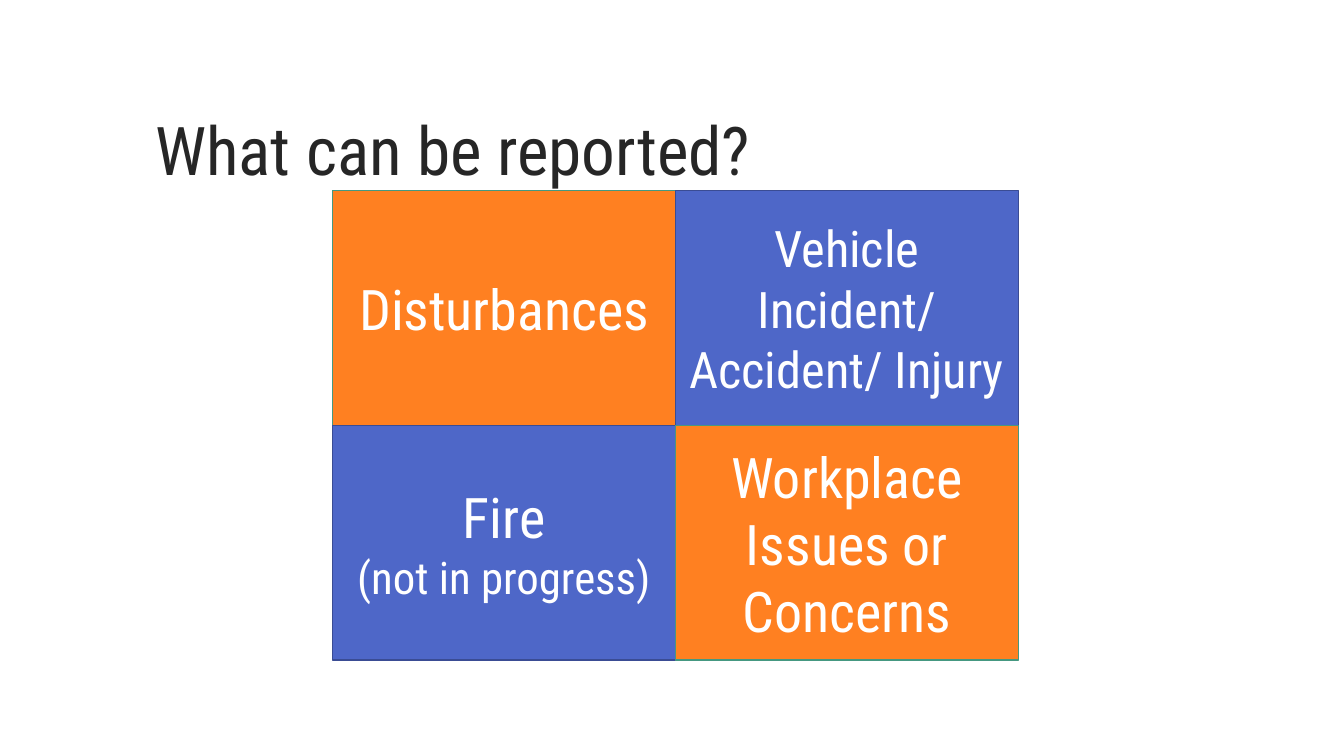
"""Build the "What can be reported?" slide with its grid of four report types."""
from pptx import Presentation
from pptx.dml.color import RGBColor
from pptx.enum.shapes import MSO_SHAPE
from pptx.enum.text import MSO_ANCHOR, PP_ALIGN
from pptx.util import Inches, Pt

TITLE = "What can be reported?"
REPORT_TYPES = [
    [
        ("orange", [("Disturbances", "large")]),
        ("blue", [("Vehicle Incident/ Accident/ Injury", "medium")]),
    ],
    [
        ("blue", [("Fire", "large"), ("(not in progress)", "small")]),
        ("orange", [("Workplace Issues or Concerns", "large")]),
    ],
]
THEME = {
    "font": "Roboto Condensed",
    "title_color": "262626",
    "tile_text": "FFFFFF",
    "tiles": {"orange": ("FF8021", "459881"), "blue": ("4E67C8", "3A4C94")},
    "sizes": {"title": 48, "large": 40, "medium": 36, "small": 32},
}
GRID_LEFT, GRID_TOP = 3.3, 1.89
TILE_WIDTH, TILE_HEIGHT = 3.4, 2.33


def add_text(paragraph, text, size, color):
    run = paragraph.add_run()
    run.text = text
    run.font.name = THEME["font"]
    run.font.size = Pt(THEME["sizes"][size])
    run.font.color.rgb = RGBColor.from_string(color)


def prepare_frame(shape):
    frame = shape.text_frame
    frame.word_wrap = True
    frame.vertical_anchor = MSO_ANCHOR.MIDDLE
    return frame


def add_title(slide):
    box = slide.shapes.add_textbox(Inches(1.44), Inches(0.8), Inches(10.52), Inches(1.45))
    paragraph = prepare_frame(box).paragraphs[0]
    paragraph.line_spacing = 0.9
    add_text(paragraph, TITLE, "title", THEME["title_color"])


def add_tile(slide, row, column, color, lines):
    shape = slide.shapes.add_shape(
        MSO_SHAPE.RECTANGLE,
        Inches(GRID_LEFT + column * TILE_WIDTH),
        Inches(GRID_TOP + row * TILE_HEIGHT),
        Inches(TILE_WIDTH),
        Inches(TILE_HEIGHT),
    )
    fill, outline = THEME["tiles"][color]
    shape.shadow.inherit = False
    shape.fill.solid()
    shape.fill.fore_color.rgb = RGBColor.from_string(fill)
    shape.line.color.rgb = RGBColor.from_string(outline)
    shape.line.width = Pt(1)
    frame = prepare_frame(shape)
    for index, (text, size) in enumerate(lines):
        paragraph = frame.add_paragraph() if index else frame.paragraphs[0]
        paragraph.alignment = PP_ALIGN.CENTER
        add_text(paragraph, text, size, THEME["tile_text"])


def main():
    presentation = Presentation()
    presentation.slide_width = Inches(13.33)
    presentation.slide_height = Inches(7.5)
    slide = presentation.slides.add_slide(presentation.slide_layouts[6])
    add_title(slide)
    for row, tiles in enumerate(REPORT_TYPES):
        for column, (color, lines) in enumerate(tiles):
            add_tile(slide, row, column, color, lines)
    presentation.save("out.pptx")


if __name__ == "__main__":
    main()
